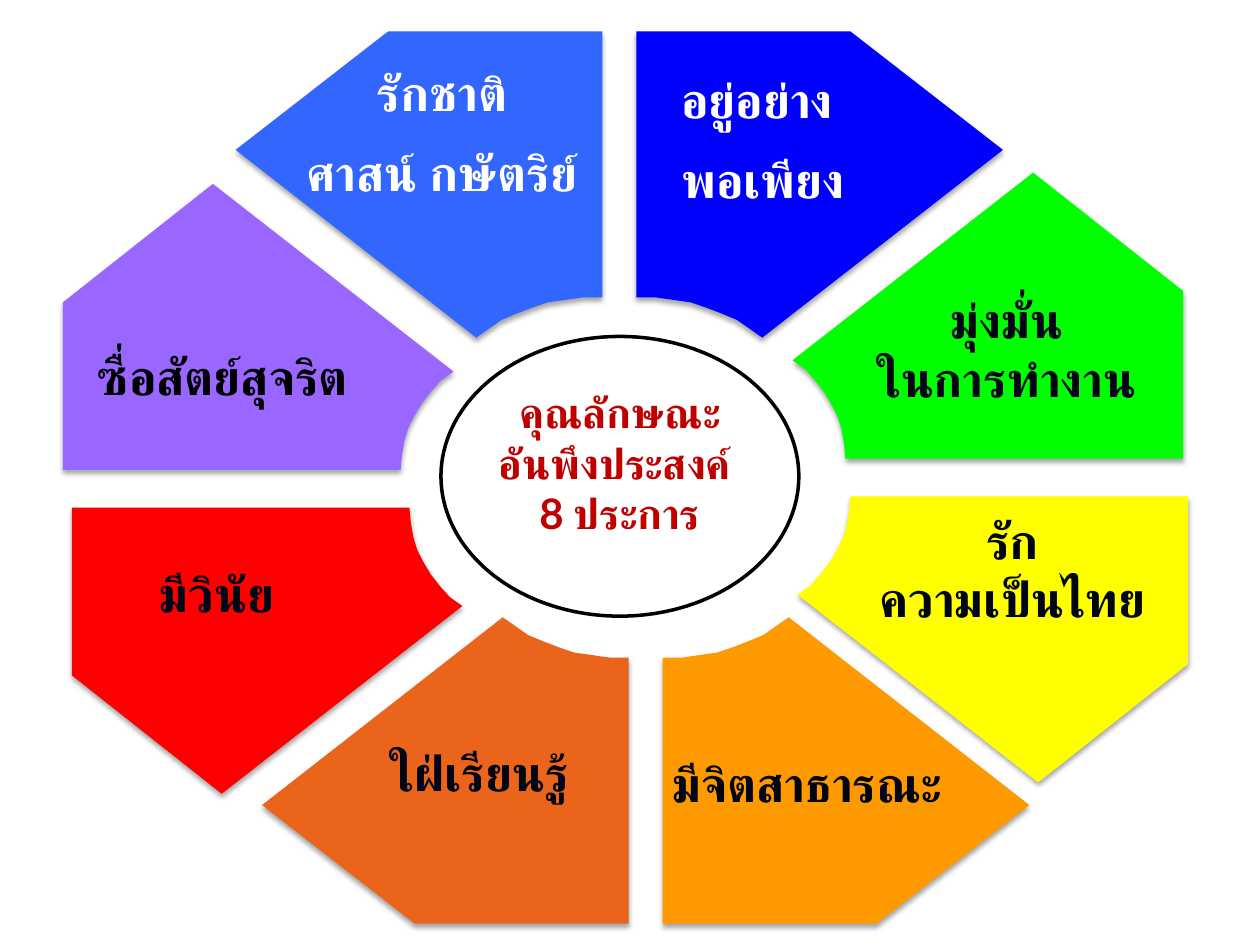
from pptx import Presentation
from pptx.dml.color import RGBColor
from pptx.enum.shapes import MSO_SHAPE
from pptx.enum.text import MSO_AUTO_SIZE, PP_ALIGN
from pptx.oxml import parse_xml
from pptx.oxml.ns import nsdecls, qn
from pptx.util import Inches, Pt
from lxml.etree import SubElement

THEME = {
    "font": "Lato",
    "title_size": 24,
    "label_size": 28,
    "white": "FFFFFF",
    "black": "000000",
    "ink": "000514",
    "title": "C00000",
}

WEDGES = {
    "tall": ((2.91, 2.43), [
        (0, 2.11), (0.15, 2.11), (0.29, 2.13), (0.43, 2.15), (0.55, 2.19),
        (0.68, 2.24), (0.8, 2.29), (0.9, 2.36), (1, 2.43),
        (2.91, 0.94), (1.7, 0), (0, 0),
    ]),
    "wide": ((3.1, 2.27), [
        (0.42, 2.27), (3.1, 2.27), (3.1, 0.94), (1.91, 0), (0, 1.49),
        (0.1, 1.56), (0.18, 1.65), (0.25, 1.74), (0.31, 1.84),
        (0.36, 1.94), (0.39, 2.04), (0.41, 2.16),
    ]),
}

PETALS = [
    ("tall", 5.05, 0.25, False, False, "0000FF"),
    ("wide", 0.5, 1.46, True, False, "9966FF"),
    ("tall", 1.87, 0.25, True, False, "3366FF"),
    ("wide", 6.29, 1.37, False, False, "00FF00"),
    ("wide", 6.33, 3.94, False, True, "FFFF00"),
    ("tall", 5.26, 4.9, False, True, "FF9900"),
    ("tall", 2.08, 4.9, True, True, "EB641B"),
    ("wide", 0.57, 4.03, True, True, "FF0000"),
]

TITLE = (["คุณลักษณะ", "อันพึงประสงค์ ", "8 ประการ"], (3.67, 3.02, 2.5, 1.31))

LABELS = [
    (["รักชาติ ", "ศาสน์ กษัตริย์ "], (2.2, 0.45, 2.71, 1.21), "white", True, 12),
    (["ซื่อสัตย์สุจริต"], (0.67, 2.7, 2.51, 0.57), "black", False, 0),
    (["มีวินัย"], (1.17, 4.42, 1.32, 0.57), "ink", False, 0),
    (["ใฝ่เรียนรู้"], (3, 5.84, 1.76, 0.57), "ink", False, 0),
    (["อยู่อย่าง", "พอเพียง"], (5.31, 0.5, 1.69, 1.21), "white", False, 12),
    (["มุ่งมั่น", "ในการทำงาน"], (6.73, 2.25, 2.52, 1.04), "ink", True, 0),
    (["มีจิตสาธารณะ"], (5.24, 5.93, 2.68, 0.57), "ink", False, 0),
    (["รัก", "ความเป็นไทย"], (6.75, 4, 2.57, 1.04), "ink", True, 0),
]


def add_shadow(petal):
    petal._element.spPr.append(parse_xml(
        f'<a:effectLst {nsdecls("a")}>'
        f'<a:outerShdw blurRad="{Pt(3.1)}" dist="{Pt(1.8)}" dir="5400000" rotWithShape="0">'
        '<a:srgbClr val="000000"><a:alpha val="35000"/></a:srgbClr>'
        '</a:outerShdw></a:effectLst>'))


def add_petal(slide, wedge, left, top, mirrored, flipped, color):
    (width, height), outline = WEDGES[wedge]
    points = [
        (Inches(left + (width - x if mirrored else x)),
         Inches(top + (height - y if flipped else y)))
        for x, y in outline
    ]
    builder = slide.shapes.build_freeform(*points[0])
    builder.add_line_segments(points[1:], close=True)
    petal = builder.convert_to_shape()
    petal.fill.solid()
    petal.fill.fore_color.rgb = RGBColor.from_string(color)
    petal.line.fill.background()
    add_shadow(petal)


def add_hub(slide):
    hub = slide.shapes.add_shape(
        MSO_SHAPE.OVAL, *map(Inches, (3.5, 2.67, 2.84, 2.22)))
    hub.shadow.inherit = False
    hub.fill.solid()
    hub.fill.fore_color.rgb = RGBColor.from_string(THEME["white"])
    hub.line.color.rgb = RGBColor.from_string(THEME["black"])
    hub.line.width = Pt(2)


def add_label(slide, lines, box, color, centered, gap, size="label_size", wrap=False):
    frame = slide.shapes.add_textbox(*map(Inches, box)).text_frame
    frame.word_wrap = wrap
    frame.auto_size = MSO_AUTO_SIZE.SHAPE_TO_FIT_TEXT
    for index, line in enumerate(lines):
        paragraph = frame.paragraphs[0] if index == 0 else frame.add_paragraph()
        paragraph.text = line
        paragraph.alignment = PP_ALIGN.CENTER if centered else PP_ALIGN.LEFT
        if gap:
            properties = paragraph._p.get_or_add_pPr()
            properties.set("marL", str(Inches(0.58)))
            properties.set("indent", str(Inches(-0.58)))
            if index:
                paragraph.space_before = Pt(gap)
        font = paragraph.font
        font.name = THEME["font"]
        font.size = Pt(THEME[size])
        font.bold = True
        font.color.rgb = RGBColor.from_string(THEME[color])
        SubElement(font._element, qn("a:cs")).set("typeface", THEME["font"]) \
            if hasattr(font, "_element") else \
            SubElement(font._rPr, qn("a:cs")).set("typeface", THEME["font"])


def main():
    """Build the wheel of eight desirable characteristics."""
    presentation = Presentation()
    presentation.slide_width, presentation.slide_height = Inches(10), Inches(7.5)
    slide = presentation.slides.add_slide(presentation.slide_layouts[6])
    for petal in PETALS:
        add_petal(slide, *petal)
    add_hub(slide)
    add_label(slide, *TITLE, "title", True, 0, size="title_size", wrap=True)
    for label in LABELS:
        add_label(slide, *label)
    presentation.save("out.pptx")


if __name__ == "__main__":
    main()
